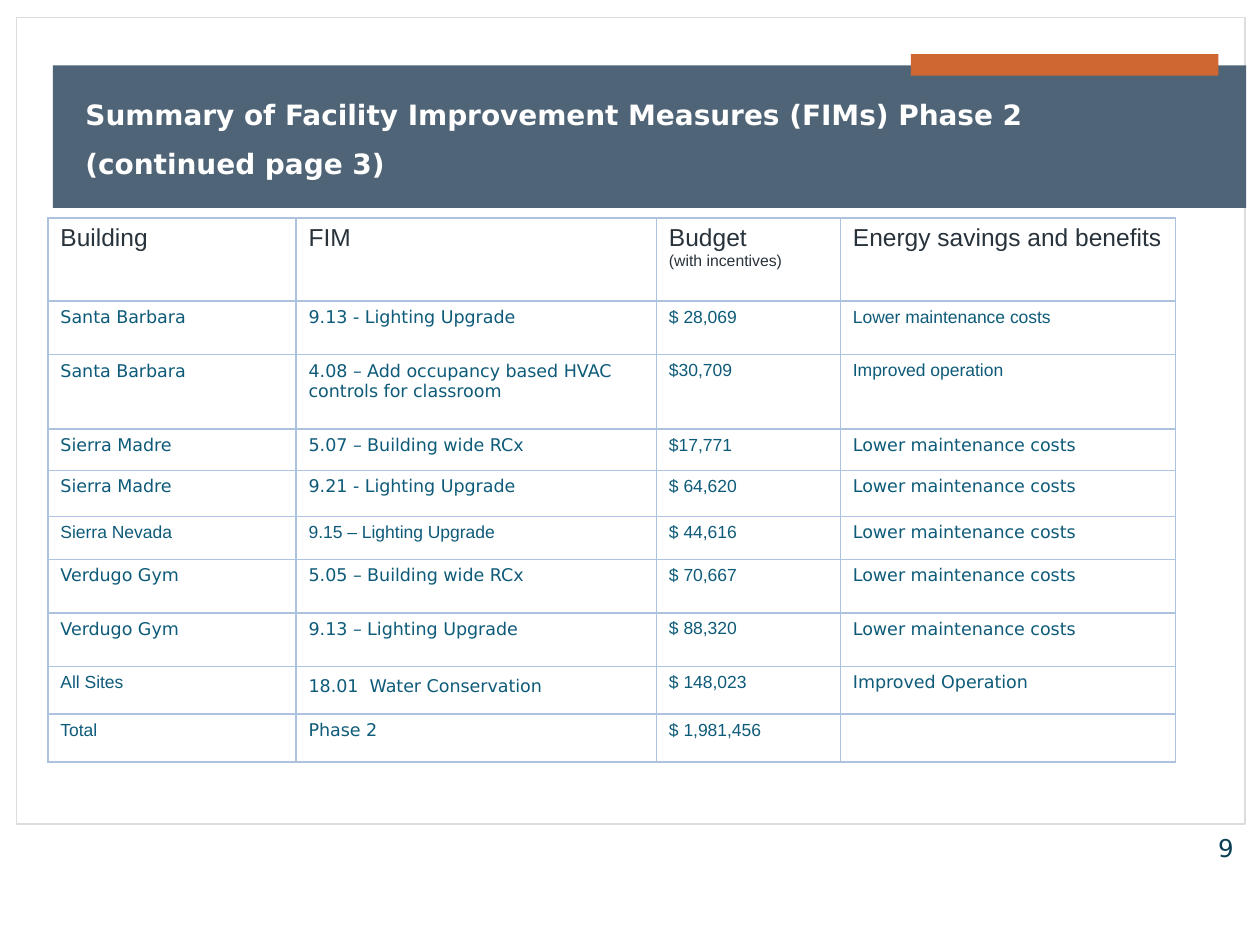
from lxml import etree
from pptx import Presentation, util as u
from pptx.dml.color import RGBColor
from pptx.enum import shapes, text
from pptx.oxml.ns import qn

SANS, ARIAL = "DejaVu Sans", "Arial"
WHITE, SLATE, ORANGE, FRAME = "FFFFFF", "4F6476", "CF6733", "DDDDDD"
HEADING, BODY, BORDER, NUMBER = "28323B", "0E5B79", "ACC2DF", "0A3F54"

HEADERS = ["Building", "FIM", "Budget", "Energy savings and benefits"]
MEASURES = [
    ["Santa Barbara", "9.13 - Lighting Upgrade", "$ 28,069", "Lower maintenance costs"],
    ["Santa Barbara", "4.08 – Add occupancy based HVAC controls for classroom",
     "$30,709", "Improved operation"],
    ["Sierra Madre", "5.07 – Building wide RCx", "$17,771", "Lower maintenance costs"],
    ["Sierra Madre", "9.21 - Lighting Upgrade", "$ 64,620", "Lower maintenance costs"],
    ["Sierra Nevada", "9.15 – Lighting Upgrade", "$ 44,616", "Lower maintenance costs"],
    ["Verdugo Gym", "5.05 – Building wide RCx", "$ 70,667", "Lower maintenance costs"],
    ["Verdugo Gym", "9.13 – Lighting Upgrade", "$ 88,320", "Lower maintenance costs"],
    ["All Sites", "18.01  Water Conservation", "$ 148,023", "Improved Operation"],
    ["Total", "Phase 2", "$ 1,981,456", ""],
]
BUDGET_COLUMN = 2
# Cells outside the budget column that are also set in Arial
ARIAL_CELLS = {(1, 3), (2, 3), (5, 0), (5, 1), (8, 0), (9, 0)}
COLUMN_WIDTHS = [19.7, 28.6, 14.6, 26.6]
ROW_HEIGHTS = [6.6, 4.25, 5.9, 3.3, 3.65, 3.4, 4.25, 4.25, 3.8, 3.8]


def color(code):
    return RGBColor.from_string(code)


def write(para, words, font=SANS, size=10, ink=BODY, bold=False,
          align=text.PP_ALIGN.LEFT, spacing=None):
    para.alignment = align
    if spacing:
        para.line_spacing = u.Pt(spacing)
    span = para.add_run()
    span.text = words
    span.font.name, span.font.size = font, u.Pt(size)
    span.font.bold = bold
    span.font.color.rgb = color(ink)


def outline_cell(cell, code, points):
    """Draw all four borders; they must come before the cell's fill."""
    properties = cell._tc.get_or_add_tcPr()
    for index, side in enumerate(("lnL", "lnR", "lnT", "lnB")):
        line = etree.Element(qn(f"a:{side}"), w=str(u.Pt(points)))
        fill = etree.SubElement(line, qn("a:solidFill"))
        etree.SubElement(fill, qn("a:srgbClr"), val=code)
        properties.insert(index, line)


class SlideBuilder:
    """Places elements on a grid of 100 columns by 75 rows."""

    def __init__(self, deck):
        self.unit = deck.slide_width / 100
        self.page = deck.slides.add_slide(deck.slide_layouts[6])

    def grid(self, *cells):
        return [u.Emu(round(cell * self.unit)) for cell in cells]

    def panel(self, place, fill, line=None):
        box = self.page.shapes.add_shape(
            shapes.MSO_SHAPE.RECTANGLE, *self.grid(*place))
        box.shadow.inherit = False
        box.fill.solid()
        box.fill.fore_color.rgb = color(fill)
        if line:
            box.line.color.rgb = color(line)
            box.line.width = u.Pt(1)
        else:
            box.line.fill.background()

    def label(self, place, words, anchor=text.MSO_ANCHOR.TOP, **style):
        frame = self.page.shapes.add_textbox(*self.grid(*place)).text_frame
        frame.word_wrap = True
        frame.vertical_anchor = anchor
        write(frame.paragraphs[0], words, **style)

    def table(self, left, top, widths, heights):
        place = self.grid(left, top, sum(widths), sum(heights))
        table = self.page.shapes.add_table(len(heights), len(widths), *place).table
        table.first_row = table.horz_banding = False
        for column, width in zip(table.columns, self.grid(*widths)):
            column.width = width
        for row, height in zip(table.rows, self.grid(*heights)):
            row.height = height
        for cell in table.iter_cells():
            cell.margin_bottom = 0
            cell.fill.background()
            outline_cell(cell, BORDER, 1)
        return table


def fill_measures(table):
    for column, words in enumerate(HEADERS):
        frame = table.cell(0, column).text_frame
        write(frame.paragraphs[0], words, font=ARIAL, size=14, ink=HEADING)
        if column == BUDGET_COLUMN:
            write(frame.add_paragraph(), "(with incentives)",
                  font=ARIAL, size=9, ink=HEADING)
    for row, measure in enumerate(MEASURES, start=1):
        for column, words in enumerate(measure):
            if not words:
                continue
            in_arial = column == BUDGET_COLUMN or (row, column) in ARIAL_CELLS
            write(table.cell(row, column).text_frame.paragraphs[0], words,
                  font=ARIAL if in_arial else SANS,
                  spacing=13.5 if words.startswith("18.01") else None)


def main():
    deck = Presentation()
    deck.slide_width, deck.slide_height = u.Inches(10), u.Inches(7.5)
    slide = SlideBuilder(deck)
    slide.panel((1.3, 1.4, 97.5, 64), WHITE, line=FRAME)
    slide.panel((4.2, 5.2, 94.7, 11.3), SLATE)
    slide.panel((72.3, 4.3, 24.4, 1.7), ORANGE)
    slide.label((5.8, 6.8, 90, 8),
                "Summary of Facility Improvement Measures (FIMs) Phase 2 (continued page 3)",
                anchor=text.MSO_ANCHOR.BOTTOM, size=16, ink=WHITE, bold=True, spacing=28)
    fill_measures(slide.table(3.8, 17.3, COLUMN_WIDTHS, ROW_HEIGHTS))
    slide.label((89.5, 65.6, 9.4, 3.4), "9", size=14, ink=NUMBER,
                align=text.PP_ALIGN.RIGHT)
    deck.save("out.pptx")


if __name__ == "__main__":
    main()
